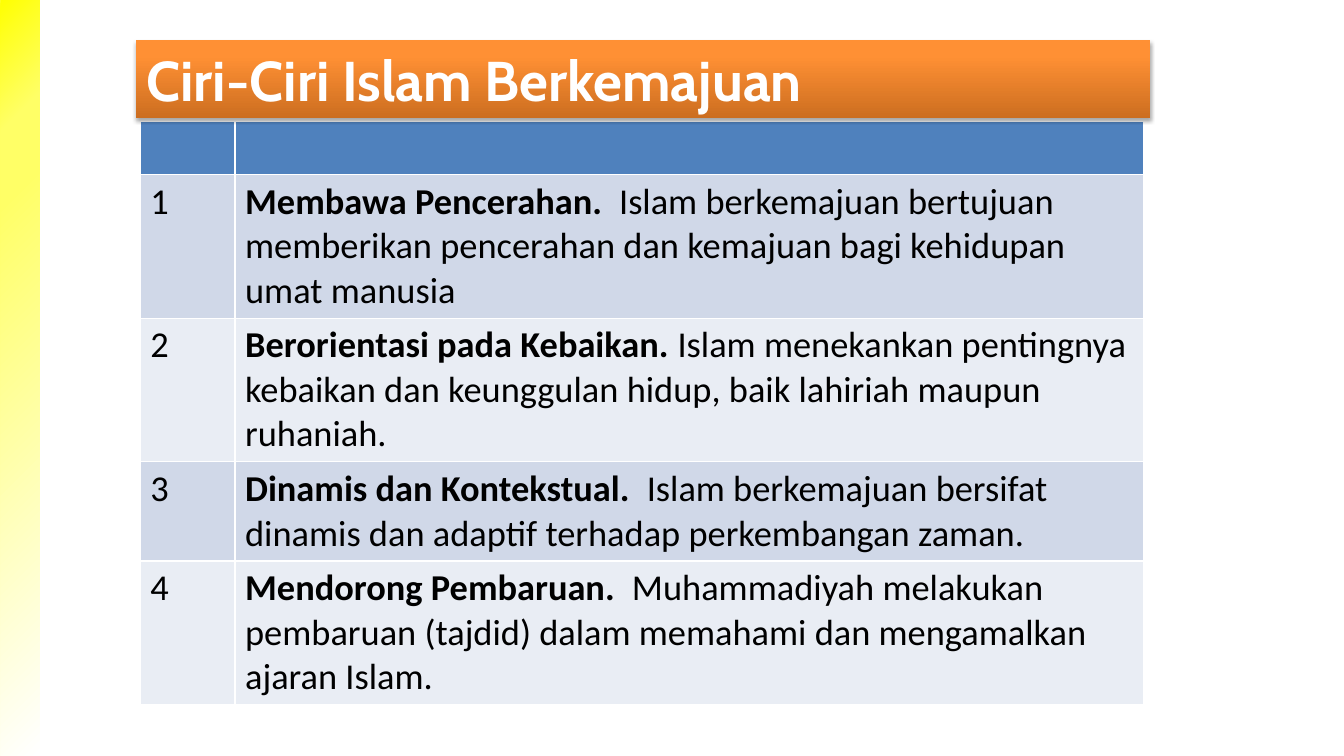
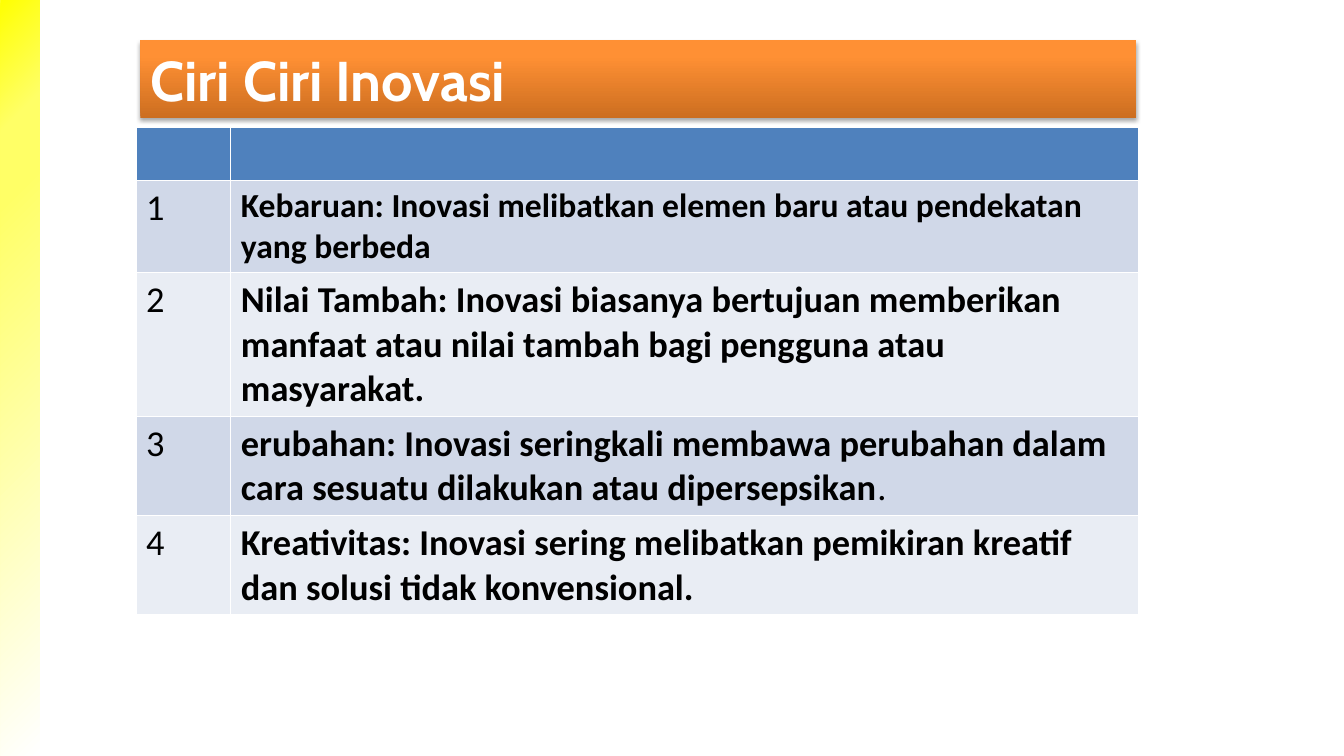
from dataclasses import dataclass

from lxml import etree
from pptx import Presentation
from pptx.dml.color import RGBColor
from pptx.enum.shapes import MSO_SHAPE
from pptx.enum.text import MSO_ANCHOR, MSO_AUTO_SIZE, PP_ALIGN
from pptx.oxml.ns import qn
from pptx.util import Pt

RECTANGLE = MSO_SHAPE.RECTANGLE
LEFT = PP_ALIGN.LEFT
MIDDLE = MSO_ANCHOR.MIDDLE
NO_AUTOFIT = MSO_AUTO_SIZE.NONE

COLORS = {
    "white": "FFFFFF", "black": "000000", "header": "4F81BD",
    "odd_row": "D0D8E8", "even_row": "E9EDF4",
    "lemon": "FFFF66", "yellow": "FFFF00",
    "rust": "CC6E20", "orange": "FF9034", "light_orange": "FF9136",
}
BAND_STOPS = [(0, "white"), (74, "lemon"), (83, "lemon"), (100, "yellow")]
TITLE_STOPS = [(0, "rust"), (80, "orange"), (100, "light_orange")]
TITLE_TOP, TITLE_HEIGHT = 28.8, 55.6
COLUMN_WIDTHS = (67.7, 648.7)
ROW_HEIGHT = 38.2
BODY_SIZE = 26


@dataclass
class Trait:
    bold: str
    regular: str = ""
    size: float = BODY_SIZE


@dataclass
class TraitSlide:
    title: str
    title_left: float
    title_width: float
    table_left: float
    table_top: float
    traits: list[Trait]


TRAIT_SLIDES = [
    TraitSlide("Ciri-Ciri Islam Berkemajuan", 97.2, 724.4, 100.2, 86.4, [
        Trait("Membawa Pencerahan.  ",
              "Islam berkemajuan bertujuan memberikan pencerahan dan kemajuan "
              "bagi kehidupan umat manusia"),
        Trait("Berorientasi pada Kebaikan. ",
              "Islam menekankan pentingnya kebaikan dan keunggulan hidup, "
              "baik lahiriah maupun ruhaniah."),
        Trait("Dinamis dan Kontekstual.  ",
              "Islam berkemajuan bersifat dinamis dan adaptif terhadap "
              "perkembangan zaman."),
        Trait("Mendorong Pembaruan.  ",
              "Muhammadiyah melakukan pembaruan (tajdid) dalam memahami dan "
              "mengamalkan ajaran Islam."),
    ]),
    TraitSlide("Ciri Ciri Inovasi", 100.2, 711.4, 97.2, 90.9, [
        Trait("Kebaruan: Inovasi melibatkan elemen baru atau pendekatan yang "
              "berbeda", size=24),
        Trait("Nilai Tambah: Inovasi biasanya bertujuan memberikan manfaat atau "
              "nilai tambah bagi pengguna atau masyarakat."),
        Trait("erubahan: Inovasi seringkali membawa perubahan dalam cara sesuatu "
              "dilakukan atau dipersepsikan", "."),
        Trait("Kreativitas: Inovasi sering melibatkan pemikiran kreatif dan "
              "solusi tidak konvensional."),
    ]),
]


def add_text(paragraph, text: str, *, size: float = BODY_SIZE, bold: bool = False,
             font: str = "Calibri", color: str = "black") -> None:
    run = paragraph.add_run()
    run.text = text
    run.font.name = font
    run.font.size = Pt(size)
    run.font.bold = bold
    run.font.color.rgb = RGBColor.from_string(COLORS[color])


def set_gradient(shape, stops: list[tuple[int, str]]):
    """Give the shape borderless gradient stops; return the gradient element."""
    shape.fill.gradient()
    shape.line.fill.background()
    shape.shadow.inherit = False
    gradient = shape.element.spPr.find(qn("a:gradFill"))
    for child in list(gradient):
        gradient.remove(child)
    stop_list = etree.SubElement(gradient, qn("a:gsLst"))
    for position, color in stops:
        stop = etree.SubElement(stop_list, qn("a:gs"), pos=str(position * 1000))
        etree.SubElement(stop, qn("a:srgbClr"), val=COLORS[color])
    return gradient


def add_side_band(slide, layout) -> None:
    band = slide.shapes.add_shape(RECTANGLE, Pt(-256.3), Pt(254.9), Pt(541.4), Pt(28.1))
    band.rotation = 270
    gradient = set_gradient(band, BAND_STOPS)
    focus = etree.SubElement(gradient, qn("a:path"), path="circle")
    etree.SubElement(focus, qn("a:fillToRect"), l="100000", t="100000")
    # The band belongs to the layout, behind its placeholders
    layout.shapes.element.insert(2, band.element)


def format_title(slide, content: TraitSlide) -> None:
    title = slide.shapes.title
    title.left, title.top = Pt(content.title_left), Pt(TITLE_TOP)
    title.width, title.height = Pt(content.title_width), Pt(TITLE_HEIGHT)
    gradient = set_gradient(title, TITLE_STOPS)
    etree.SubElement(gradient, qn("a:lin"), ang="16200000", scaled="0")

    # Soft shadow below the title bar
    effects = title.element.spPr.find(qn("a:effectLst"))
    shadow = etree.SubElement(effects, qn("a:outerShdw"), blurRad=str(Pt(3.1)),
                              dist=str(Pt(1.8)), dir="5400000", rotWithShape="0")
    shade = etree.SubElement(shadow, qn("a:srgbClr"), val=COLORS["black"])
    etree.SubElement(shade, qn("a:alpha"), val="35000")

    frame = title.text_frame
    frame.word_wrap = True
    frame.auto_size = NO_AUTOFIT
    frame.vertical_anchor = MIDDLE
    paragraph = frame.paragraphs[0]
    paragraph.alignment = LEFT
    add_text(paragraph, content.title, size=40, bold=True, font="Cabin", color="white")
    # Bring the bar in front of the table
    slide.shapes.element.append(title.element)


def add_trait_table(slide, content: TraitSlide) -> None:
    row_count = len(content.traits) + 1
    table = slide.shapes.add_table(
        row_count, len(COLUMN_WIDTHS), Pt(content.table_left), Pt(content.table_top),
        Pt(sum(COLUMN_WIDTHS)), Pt(ROW_HEIGHT * row_count)).table
    for column, width in zip(table.columns, COLUMN_WIDTHS):
        column.width = Pt(width)

    for index, row in enumerate(table.rows):
        row.height = Pt(ROW_HEIGHT)
        color = "header" if index == 0 else "odd_row" if index % 2 else "even_row"
        for cell in row.cells:
            cell.fill.solid()
            cell.fill.fore_color.rgb = RGBColor.from_string(COLORS[color])

    for number, trait in enumerate(content.traits, start=1):
        add_text(table.cell(number, 0).text_frame.paragraphs[0], str(number))
        paragraph = table.cell(number, 1).text_frame.paragraphs[0]
        add_text(paragraph, trait.bold, size=trait.size, bold=True)
        if trait.regular:
            add_text(paragraph, trait.regular, size=trait.size)


def main() -> None:
    presentation = Presentation()
    presentation.slide_width, presentation.slide_height = Pt(960), Pt(540)
    layout = presentation.slide_layouts.get_by_name("Title Only")
    for index, content in enumerate(TRAIT_SLIDES):
        slide = presentation.slides.add_slide(layout)
        if index == 0:
            add_side_band(slide, layout)
        add_trait_table(slide, content)
        format_title(slide, content)
    presentation.save("out.pptx")


if __name__ == "__main__":
    main()
